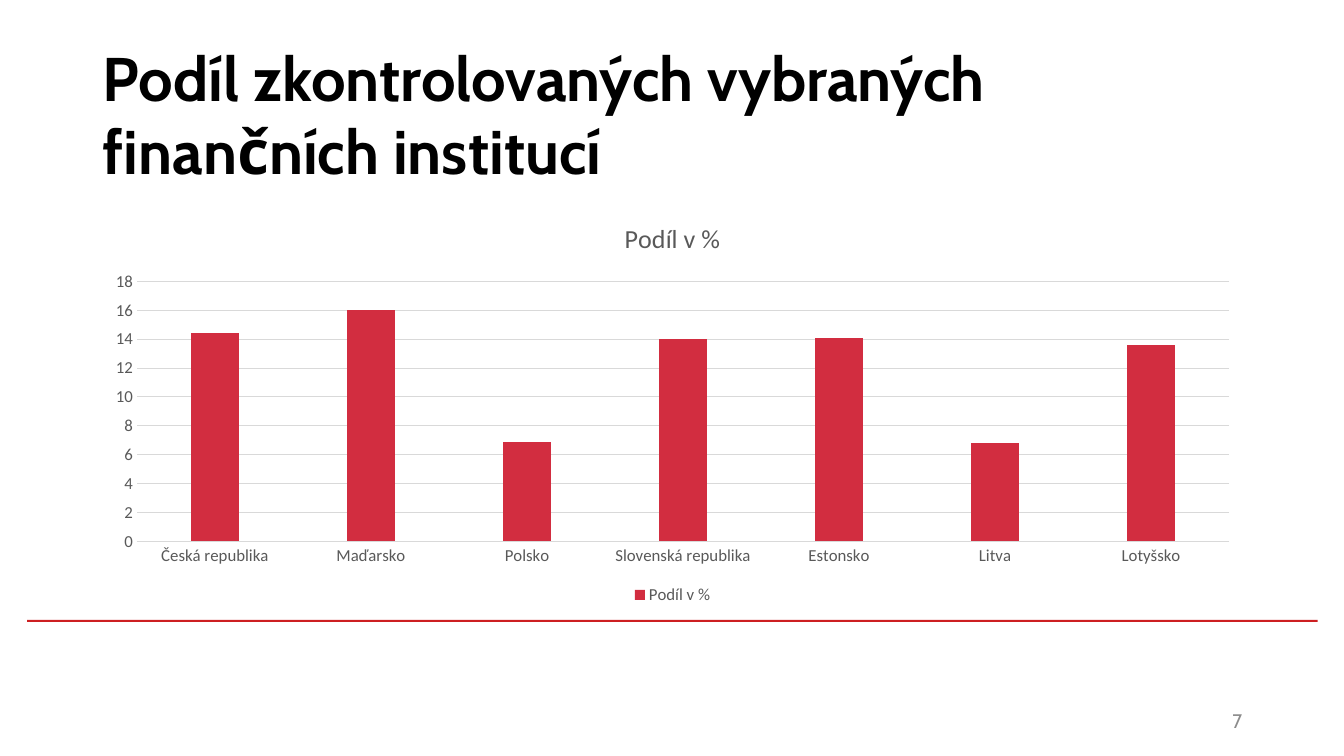
"""Builds a slide with a column chart of inspected financial institutions."""
from dataclasses import dataclass

from pptx import Presentation
from pptx.chart.data import CategoryChartData
from pptx.dml.color import RGBColor
from pptx.enum.chart import XL_CHART_TYPE, XL_LEGEND_POSITION, XL_TICK_MARK
from pptx.enum.shapes import MSO_SHAPE
from pptx.enum.text import MSO_ANCHOR, MSO_AUTO_SIZE, PP_ALIGN
from pptx.util import Inches, Pt

COLUMN = XL_CHART_TYPE.COLUMN_CLUSTERED
LEGEND_BOTTOM = XL_LEGEND_POSITION.BOTTOM
NO_TICK = XL_TICK_MARK.NONE
RECTANGLE = MSO_SHAPE.RECTANGLE
MIDDLE = MSO_ANCHOR.MIDDLE
NO_AUTOFIT = MSO_AUTO_SIZE.NONE
LEFT, RIGHT = PP_ALIGN.LEFT, PP_ALIGN.RIGHT
TITLE_ONLY = 5


@dataclass(frozen=True)
class Theme:
    heading_font: str = "Cabin"
    chart_font: str = "Calibri"
    title: str = "000000"
    chart_text: str = "595959"
    grid: str = "D9D9D9"
    bar: str = "D22D40"
    rule: str = "CD1F21"
    number: str = "8C8C8C"
    title_size: float = 44
    chart_title_size: float = 18.6
    label_size: float = 12
    number_size: float = 14
    grid_width: float = 0.75


THEME = Theme()
SERIES = "Podíl v %"
SHARES = {
    "Česká republika": 14.4,
    "Maďarsko": 16,
    "Polsko": 6.9,
    "Slovenská republika": 14,
    "Estonsko": 14.1,
    "Litva": 6.8,
    "Lotyšsko": 13.6,
}


def rgb(color):
    return RGBColor.from_string(color)


def box(*lengths):
    return [Inches(length) for length in lengths]


def set_font(font, name, size, color, bold=False):
    font.name, font.size, font.bold = name, Pt(size), bold
    font.color.rgb = rgb(color)


def set_line(line):
    line.color.rgb = rgb(THEME.grid)
    line.width = Pt(THEME.grid_width)


def fill_text(sp, text, align, name, size, color, bold=False):
    tf = sp.text_frame
    tf.text = text
    tf.word_wrap = True
    tf.auto_size = NO_AUTOFIT
    tf.vertical_anchor = MIDDLE
    p = tf.paragraphs[0]
    p.alignment = align
    set_font(p.font, name, size, color, bold)


def add_title(s, text):
    sp = s.shapes.title
    sp.left, sp.top, sp.width, sp.height = box(0.92, 0.4, 11.5, 1.45)
    fill_text(sp, text, LEFT, THEME.heading_font, THEME.title_size, THEME.title, True)


def add_rule(s):
    sp = s.shapes.add_shape(RECTANGLE, *box(0.27, 6.15, 12.8, 0.02))
    sp.shadow.inherit = False
    sp.fill.solid()
    sp.fill.fore_color.rgb = rgb(THEME.rule)
    sp.line.fill.background()


def add_number(s, text):
    sp = s.shapes.add_textbox(*box(9.42, 6.95, 3, 0.4))
    fill_text(sp, text, RIGHT, THEME.heading_font, THEME.number_size, THEME.number)


def style_axes(chart):
    for axis in (chart.category_axis, chart.value_axis):
        axis.major_tick_mark = axis.minor_tick_mark = NO_TICK
    set_line(chart.category_axis.format.line)
    values = chart.value_axis
    values.minimum_scale, values.maximum_scale, values.major_unit = 0, 18, 2
    values.format.line.fill.background()
    values.has_major_gridlines = True
    set_line(values.major_gridlines.format.line)


def add_share_chart(s):
    data = CategoryChartData()
    data.categories = SHARES.keys()
    data.add_series(SERIES, SHARES.values())
    chart = s.shapes.add_chart(COLUMN, *box(0.92, 2, 11.5, 4.04), data).chart
    set_font(chart.font, THEME.chart_font, THEME.label_size, THEME.chart_text)

    chart.has_title = True
    tf = chart.chart_title.text_frame
    tf.text = SERIES
    set_font(tf.paragraphs[0].font, THEME.chart_font, THEME.chart_title_size,
             THEME.chart_text)
    chart.chart_title.include_in_layout = False

    chart.has_legend = True
    chart.legend.position = LEGEND_BOTTOM
    chart.legend.include_in_layout = False
    style_axes(chart)

    plot = chart.plots[0]
    plot.vary_by_categories = False
    plot.gap_width, plot.overlap = 219, -27
    fill = plot.series[0].format.fill
    fill.solid()
    fill.fore_color.rgb = rgb(THEME.bar)


def main():
    prs = Presentation()
    prs.slide_width, prs.slide_height = box(13.33, 7.5)
    s = prs.slides.add_slide(prs.slide_layouts[TITLE_ONLY])
    add_rule(s)
    add_title(s, "Podíl zkontrolovaných vybraných finančních institucí")
    add_share_chart(s)
    add_number(s, "7")
    prs.save("out.pptx")


if __name__ == "__main__":
    main()
